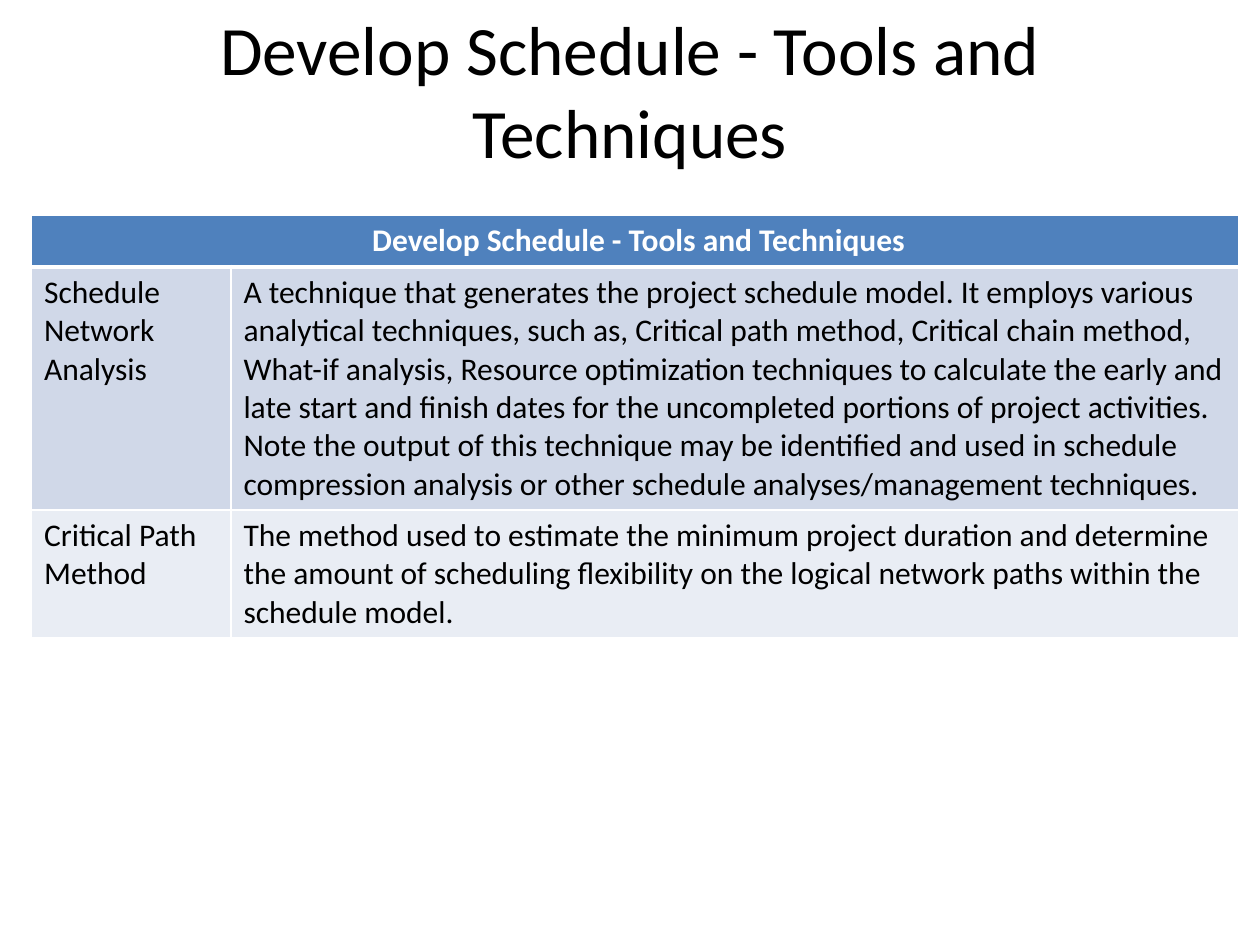
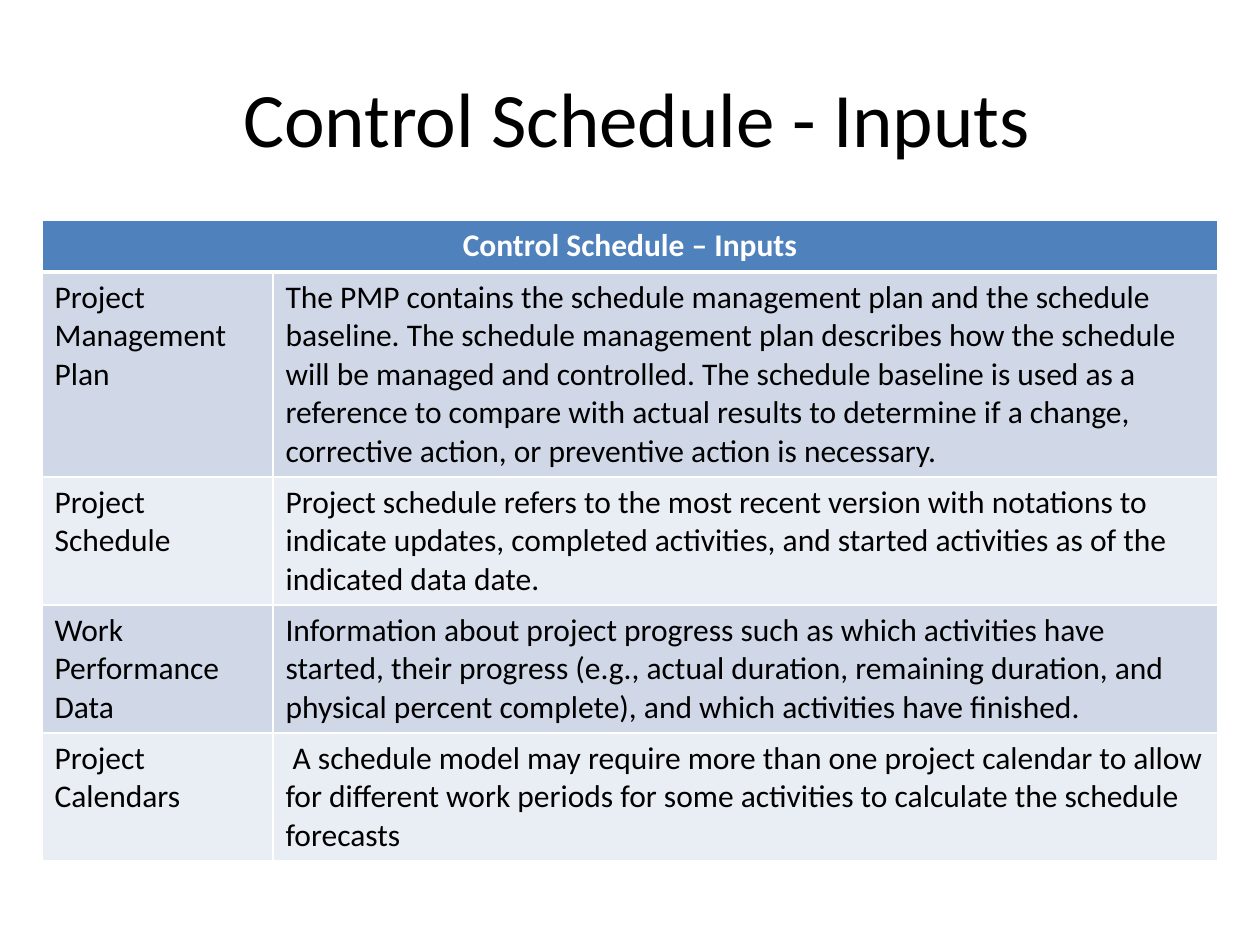
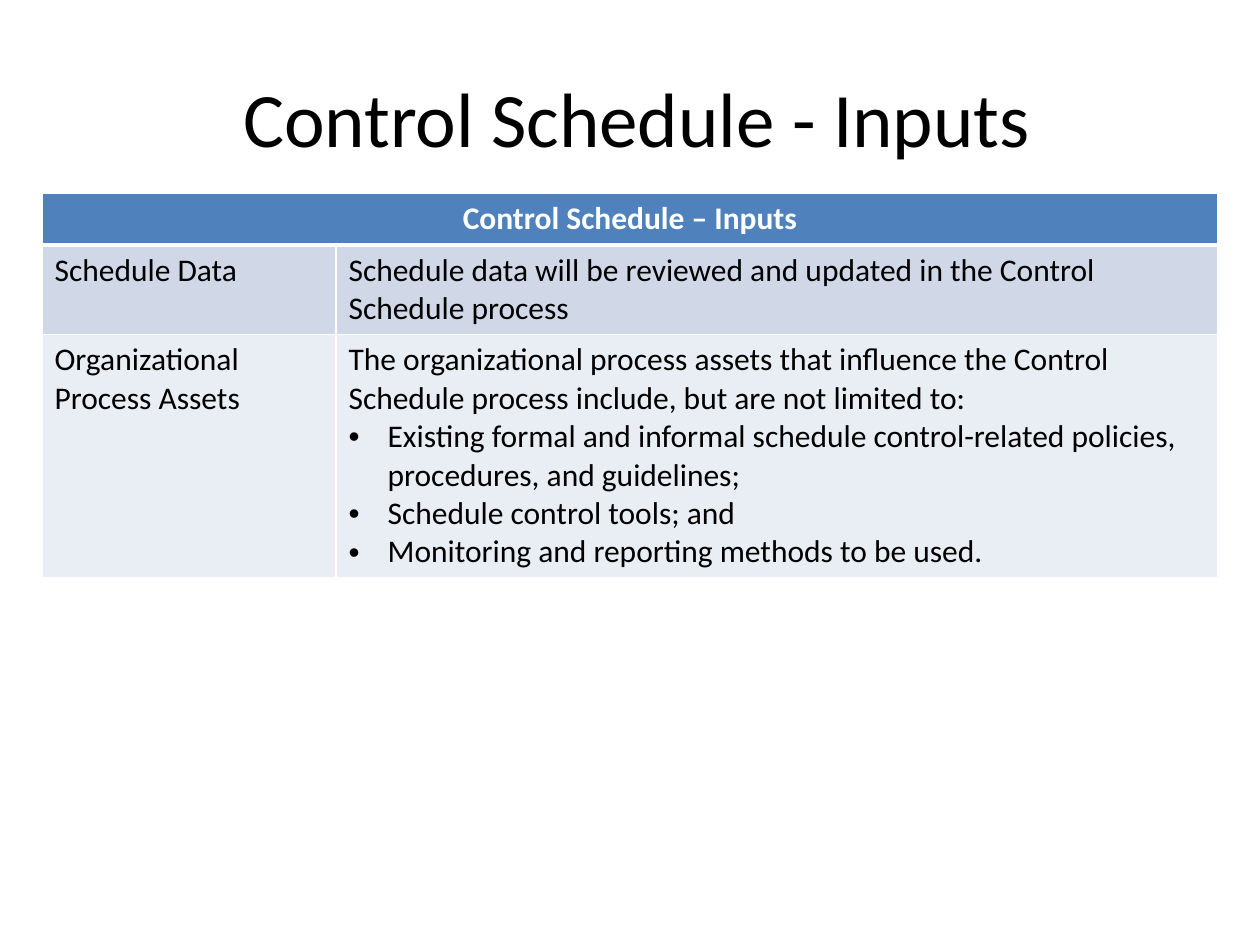
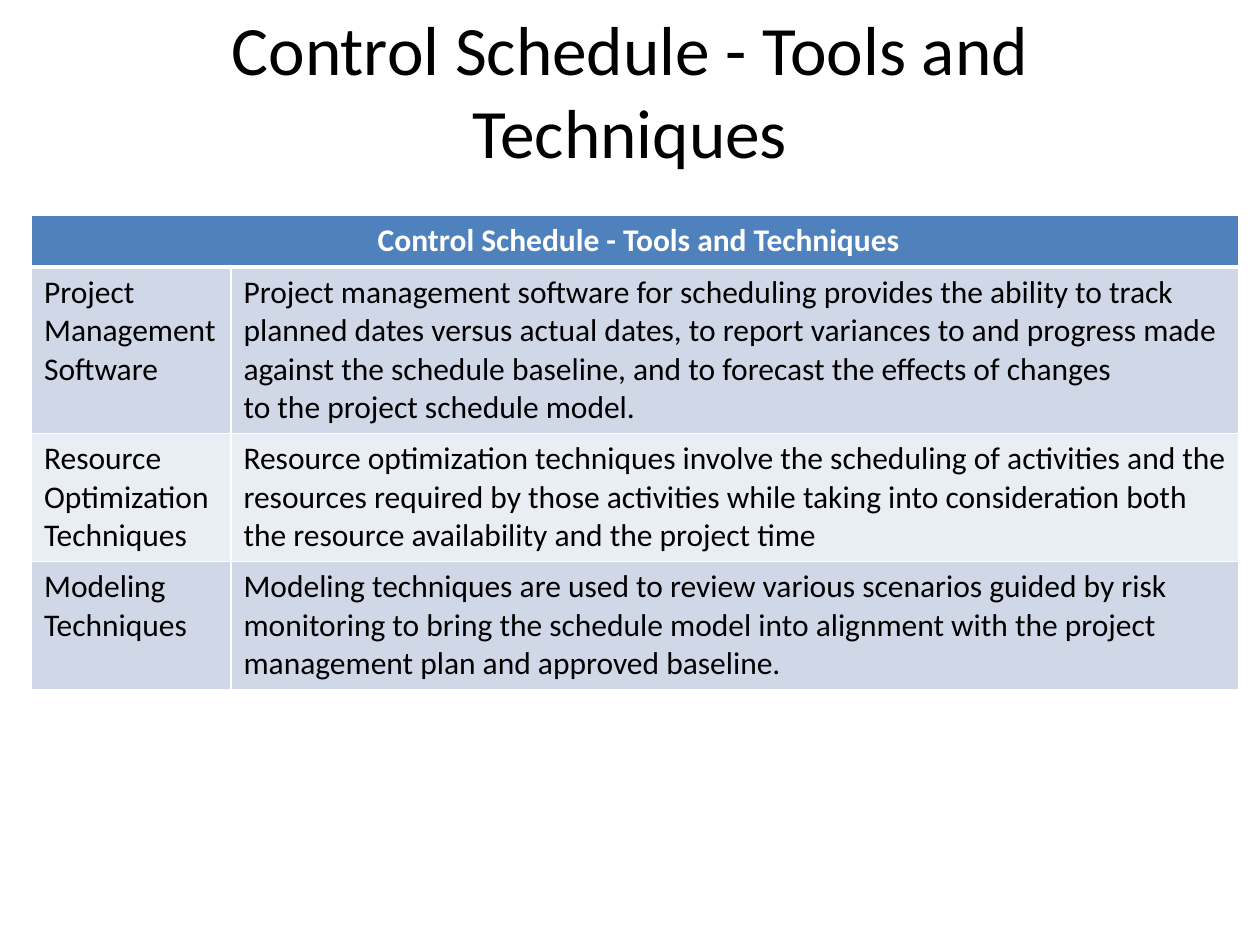
from lxml import etree
from pptx import Presentation
from pptx.dml.color import RGBColor
from pptx.enum.text import MSO_ANCHOR, MSO_AUTO_SIZE, PP_ALIGN
from pptx.oxml.ns import qn
from pptx.util import Inches, Pt

CENTER, LEFT = PP_ALIGN.CENTER, PP_ALIGN.LEFT
MIDDLE = MSO_ANCHOR.MIDDLE
NO_AUTOFIT = MSO_AUTO_SIZE.NONE
TITLE_ONLY = 5

FONT = "Calibri"
COLORS = {
    "text": "000000",
    "white": "FFFFFF",
    "header": "4F81BD",
    "odd_row": "D0D8E8",
    "even_row": "E9EDF4",
}
BULLET = "• "
ROW_HEIGHT = Inches(0.41)

# Boxes are left, top, width, height in grid units.
WIDE_TITLE = {"box": (6, 1, 108, 15), "size": 39.6}
INPUTS_TITLE = {"box": (6, 3.6, 111, 15), "size": 44}
TOOLS_COLUMNS = (19, 96)


def grid(units):
    """Convert grid units, 12 to the inch, to a length."""
    return Inches(units / 12)


def color(name):
    return RGBColor.from_string(COLORS[name])


def add_bullet(paragraph):
    properties = paragraph._p.get_or_add_pPr()
    properties.set("marL", str(Inches(0.31)))
    properties.set("indent", str(-Inches(0.31)))
    etree.SubElement(properties, qn("a:buFont")).set("typeface", "Arial")
    etree.SubElement(properties, qn("a:buChar")).set("char", BULLET.strip())


def write_text(frame, text, size=18, color_name="text", bold=False, align=LEFT):
    """Write one paragraph per line; a leading bullet makes a list item."""
    for index, line in enumerate(text.split("\n")):
        paragraph = frame.add_paragraph() if index else frame.paragraphs[0]
        paragraph.alignment = align
        if line.startswith(BULLET):
            add_bullet(paragraph)
        run = paragraph.add_run()
        run.text = line.removeprefix(BULLET)
        run.font.name = FONT
        run.font.size = Pt(size)
        run.font.bold = bold
        run.font.color.rgb = color(color_name)


def set_borders(cell, top=1, bottom=1):
    """Draw white cell borders, with widths in points."""
    properties = cell._tc.get_or_add_tcPr()
    for side, width in (("L", 1), ("R", 1), ("T", top), ("B", bottom)):
        line = etree.SubElement(properties, qn(f"a:ln{side}"), w=str(Pt(width)))
        fill = etree.SubElement(line, qn("a:solidFill"))
        etree.SubElement(fill, qn("a:srgbClr"), val=COLORS["white"])


def fill_cell(cell, fill_name):
    cell.fill.solid()
    cell.fill.fore_color.rgb = color(fill_name)


def add_title(slide, text, box, size):
    title = slide.shapes.title
    title.left, title.top, title.width, title.height = map(grid, box)
    frame = title.text_frame
    frame.auto_size = NO_AUTOFIT
    frame.word_wrap = True
    frame.vertical_anchor = MIDDLE
    write_text(frame, text, size=size, align=CENTER)


def add_definition_table(slide, heading, entries, left, top, columns, height):
    """Add a heading row over rows of term and description."""
    row_count = len(entries) + 1
    frame = slide.shapes.add_table(
        row_count, len(columns), grid(left), grid(top),
        grid(sum(columns)), ROW_HEIGHT * row_count)
    table = frame.table
    for column, width in zip(table.columns, columns):
        column.width = grid(width)
    frame.height = grid(height)

    for cell in table.rows[0].cells:
        set_borders(cell, bottom=3)
        fill_cell(cell, "header")
    table.cell(0, 0).merge(table.cell(0, len(columns) - 1))
    write_text(table.cell(0, 0).text_frame, heading,
               color_name="white", bold=True, align=CENTER)

    for row, entry in enumerate(entries, start=1):
        for column, text in enumerate(entry):
            cell = table.cell(row, column)
            set_borders(cell, top=3 if row == 1 else 1)
            fill_cell(cell, "odd_row" if row % 2 else "even_row")
            write_text(cell.text_frame, text)


DEVELOP_TOOLS = [
    ("Schedule Network Analysis",
     "A technique that generates the project schedule model. It employs various "
     "analytical techniques, such as, Critical path method, Critical chain method,\n"
     "What-if analysis, Resource optimization techniques to calculate the early and "
     "late start and finish dates for the uncompleted portions of project activities. "
     "Note the output of this technique may be identified and used in schedule "
     "compression analysis or other schedule analyses/management techniques."),
    ("Critical Path Method",
     "The method used to estimate the minimum project duration and determine the "
     "amount of scheduling flexibility on the logical network paths within the "
     "schedule model."),
]
CONTROL_INPUTS = [
    ("Project Management Plan",
     "The PMP contains the schedule management plan and the schedule baseline. The "
     "schedule management plan describes how the schedule will be managed and "
     "controlled. The schedule baseline is used as a reference to compare with actual "
     "results to determine if a change, corrective action, or preventive action is "
     "necessary."),
    ("Project Schedule",
     "Project schedule refers to the most recent version with notations to indicate "
     "updates, completed activities, and started activities as of the indicated data "
     "date."),
    ("Work Performance Data",
     "Information about project progress such as which activities have started, their "
     "progress (e.g., actual duration, remaining duration, and physical percent "
     "complete), and which activities have finished."),
    ("Project Calendars",
     " A schedule model may require more than one project calendar to allow for "
     "different work periods for some activities to calculate the schedule forecasts"),
]
MORE_CONTROL_INPUTS = [
    ("Schedule Data",
     "Schedule data will be reviewed and updated in the Control Schedule process"),
    ("Organizational Process Assets",
     "The organizational process assets that influence the Control Schedule process "
     "include, but are not limited to:\n"
     "• Existing formal and informal schedule control-related policies, procedures, "
     "and guidelines;\n"
     "• Schedule control tools; and\n"
     "• Monitoring and reporting methods to be used."),
]
CONTROL_TOOLS = [
    ("Project Management Software",
     "Project management software for scheduling provides the ability to track planned "
     "dates versus actual dates, to report variances to and progress made against the "
     "schedule baseline, and to forecast the effects of changes\n"
     "to the project schedule model."),
    ("Resource Optimization Techniques",
     "Resource optimization techniques involve the scheduling of activities and the "
     "resources required by those activities while taking into consideration both the "
     "resource availability and the project time"),
    ("Modeling Techniques",
     "Modeling techniques are used to review various scenarios guided by risk "
     "monitoring to bring the schedule model into alignment with the project "
     "management plan and approved baseline."),
]


def add_tools_slide(slide, process, entries, height):
    title = f"{process} Schedule - Tools and Techniques"
    add_title(slide, title, **WIDE_TITLE)
    add_definition_table(slide, f" {title}", entries, left=3, top=20.5,
                         columns=TOOLS_COLUMNS, height=height)


def add_inputs_slide(slide, entries, top, columns, height):
    add_title(slide, "Control Schedule - Inputs ", **INPUTS_TITLE)
    add_definition_table(slide, "Control Schedule – Inputs", entries, left=4,
                         top=top, columns=columns, height=height)


def main():
    presentation = Presentation()
    presentation.slide_width, presentation.slide_height = Inches(10), Inches(7.5)
    layout = presentation.slide_layouts[TITLE_ONLY]

    def new_slide():
        return presentation.slides.add_slide(layout)

    add_tools_slide(new_slide(), "Develop", DEVELOP_TOOLS, height=43.3)
    add_inputs_slide(new_slide(), CONTROL_INPUTS, top=21, columns=(22, 90), height=60.1)
    add_inputs_slide(new_slide(), MORE_CONTROL_INPUTS, top=18.4, columns=(28, 84),
                     height=36.1)
    add_tools_slide(new_slide(), "Control", CONTROL_TOOLS, height=44.5)
    presentation.save("out.pptx")


if __name__ == "__main__":
    main()
